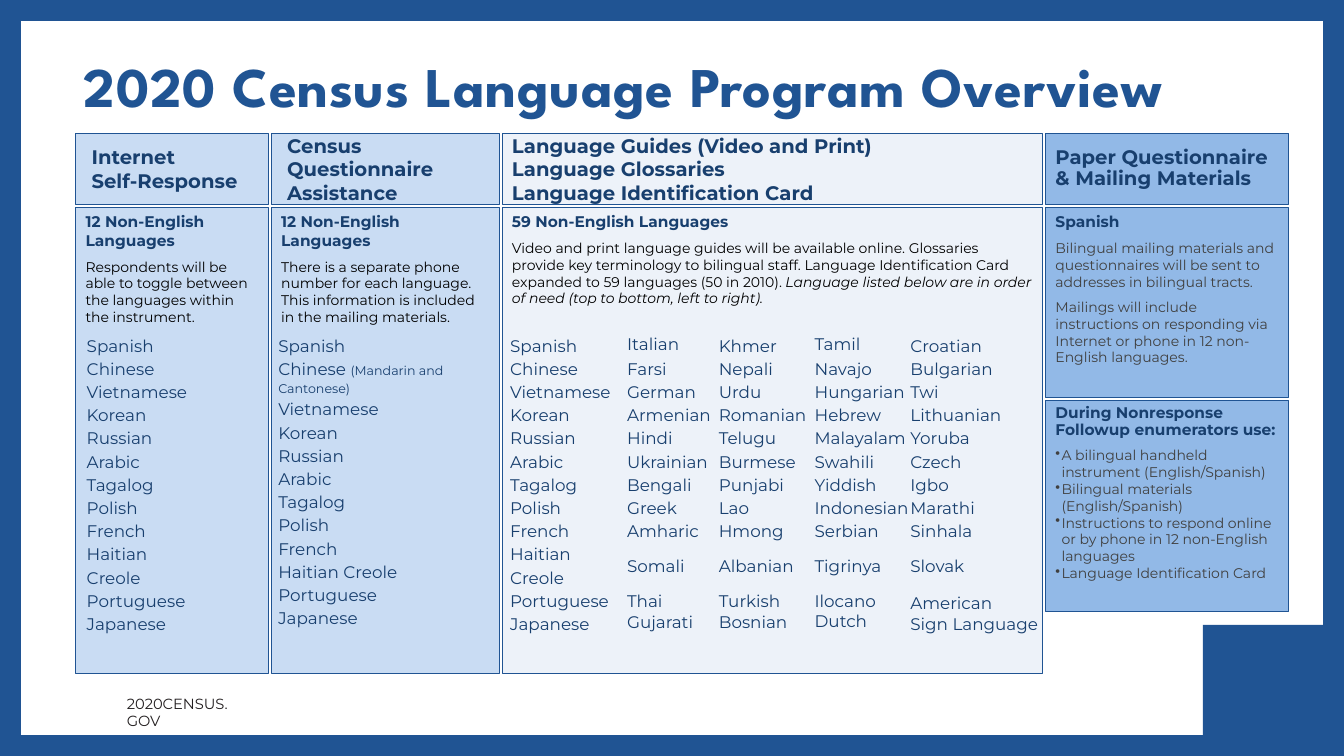
from dataclasses import dataclass
from lxml import etree
from pptx import Presentation
from pptx.dml.color import RGBColor
from pptx.enum.shapes import MSO_SHAPE
from pptx.enum.text import MSO_ANCHOR, MSO_AUTO_SIZE, PP_ALIGN
from pptx.oxml.ns import qn
from pptx.util import Emu, Inches, Pt

RECTANGLE = MSO_SHAPE.RECTANGLE
TOP, MIDDLE, BOTTOM = MSO_ANCHOR.TOP, MSO_ANCHOR.MIDDLE, MSO_ANCHOR.BOTTOM
LEFT = PP_ALIGN.LEFT
NO_AUTOFIT = MSO_AUTO_SIZE.NONE
PLAIN_TABLE = "{2D5ABB26-0587-4C30-8999-92F81FD0307C}"
TITLE_ONLY = 5


@dataclass(frozen=True)
class Style:
    size: float
    color: str
    bold: bool = False
    italic: bool = False
    font: str = "Montserrat"


class Theme:
    blue, white = "205493", "FFFFFF"
    pale, light, medium = "EDF2F9", "C9DCF3", "92B9E7"
    title = Style(40, blue, True, font="League Spartan")
    header = Style(14, "183F6E", True)
    lead = Style(11, "183F6E", True)
    body = Style(10, "000000")
    emphasis = Style(10, "000000", italic=True)
    gray = Style(10, "404040")
    language = Style(12, "183F6E")
    note = Style(9, "183F6E")
    footer = Style(10.5, "231F20")


@dataclass(frozen=True)
class Box:
    left: float
    top: float
    width: float
    height: float

    def inches(self):
        return [Inches(n) for n in (self.left, self.top, self.width, self.height)]


@dataclass(frozen=True)
class Line:
    runs: tuple
    after: float = 0
    spacing: float = 1.0
    indent: float = 0
    bullet: bool = False


SLIDE = Box(0, 0, 13.33, 7.5)
GAP = 0.03
COLUMN_WIDTHS = (1.91, 2.26, 5.36, 2.41)
COLUMN_LEFTS = [0.75 + sum(COLUMN_WIDTHS[:i]) + GAP * i for i in range(4)]
HEADER_TOP, HEADER_HEIGHT = 1.32, 0.71
BODY_TOP, BODY_HEIGHT = HEADER_TOP + HEADER_HEIGHT + GAP, 4.62
SPANISH_HEIGHT, FOLLOWUP_HEIGHT = 1.88, 2.1
LIST_TOP, LIST_HEIGHT, ROW_HEIGHT = 3.3, 2.6, 0.15

TOP_LANGUAGES = ["Spanish", "Chinese", "Vietnamese", "Korean", "Russian", "Arabic", "Tagalog",
                 "Polish", "French", "Haitian Creole", "Portuguese", "Japanese"]
GUIDE_LANGUAGES = [
    TOP_LANGUAGES,
    ["Italian", "Farsi", "German", "Armenian", "Hindi", "Ukrainian", "Bengali", "Greek",
     "Amharic", "Somali", "Thai", "Gujarati"],
    ["Khmer", "Nepali", "Urdu", "Romanian", "Telugu", "Burmese", "Punjabi", "Lao", "Hmong",
     "Albanian", "Turkish", "Bosnian"],
    ["Tamil", "Navajo", "Hungarian", "Hebrew", "Malayalam", "Swahili", "Yiddish", "Indonesian",
     "Serbian", "Tigrinya", "Ilocano", "Dutch"],
    ["Croatian", "Bulgarian", "Twi", "Lithuanian", "Yoruba", "Czech", "Igbo", "Marathi",
     "Sinhala", "Slovak", "American\nSign Language"],
]
SINGLE_SPACED = {"Italian", "Tamil", "Gujarati", "Bosnian", "Dutch", "American\nSign Language"}
ANCHORS = {"Dutch": TOP, "American\nSign Language": BOTTOM}


def format_run(run, style):
    font = run.font
    font.name, font.size = style.font, Pt(style.size)
    font.bold, font.italic = style.bold, style.italic
    font.color.rgb = RGBColor.from_string(style.color)


def add_run(paragraph, text, style):
    run = paragraph.add_run()
    run.text = text
    format_run(run, style)


def write_lines(text_frame, lines):
    for i, line in enumerate(lines):
        paragraph = text_frame.add_paragraph() if i else text_frame.paragraphs[0]
        paragraph.alignment = LEFT
        paragraph.line_spacing, paragraph.space_after = line.spacing, Pt(line.after)
        properties = paragraph._p.get_or_add_pPr()
        if line.indent:
            properties.set("marL", str(Inches(line.indent)))
            properties.set("indent", str(-Inches(line.indent) if line.bullet else 0))
        if line.bullet:
            etree.SubElement(properties, qn("a:buChar")).set("char", "•")
            tabs = etree.SubElement(properties, qn("a:tabLst"))
            tab = etree.SubElement(tabs, qn("a:tab"))
            tab.set("pos", str(Inches(line.indent)))
            tab.set("algn", "l")
        for text, style in line.runs:
            add_run(paragraph, text, style)


def add_panel(slide, box, fill, lines=(), anchor=TOP, outlined=True):
    shape = slide.shapes.add_shape(RECTANGLE, *box.inches())
    shape.shadow.inherit = False
    shape.fill.solid()
    shape.fill.fore_color.rgb = RGBColor.from_string(fill)
    if outlined:
        shape.line.color.rgb = RGBColor.from_string(Theme.blue)
        shape.line.width = Pt(0.5)
    else:
        shape.line.fill.background()
    shape.text_frame.word_wrap = True
    shape.text_frame.vertical_anchor = anchor
    write_lines(shape.text_frame, lines)


def add_header(slide, column, fill, texts, spacing=1.0, indent=0):
    box = Box(COLUMN_LEFTS[column], HEADER_TOP, COLUMN_WIDTHS[column], HEADER_HEIGHT)
    lines = [Line(((text, Theme.header),), spacing=spacing, indent=indent) for text in texts]
    add_panel(slide, box, fill, lines, MIDDLE)


def add_body(slide, column, fill, lead, *runs):
    box = Box(COLUMN_LEFTS[column], BODY_TOP, COLUMN_WIDTHS[column], BODY_HEIGHT)
    add_panel(slide, box, fill, [Line(((lead, Theme.lead),), after=6), Line(runs)])


def add_languages(slide, left, widths, columns):
    box = Box(left, LIST_TOP, sum(widths), LIST_HEIGHT)
    frame = slide.shapes.add_table(len(columns[0]), len(columns), *box.inches())
    table = frame.table
    table.first_row = table.horz_banding = False
    table._tbl.tblPr.find(qn("a:tableStyleId")).text = PLAIN_TABLE
    for row in table.rows:
        row.height = Inches(ROW_HEIGHT)
    for c, (width, names) in enumerate(zip(widths, columns)):
        table.columns[c].width = Inches(width)
        if len(names) < len(table.rows):
            table.cell(len(names) - 1, c).merge(table.cell(len(table.rows) - 1, c))
        for r, name in enumerate(names):
            cell = table.cell(r, c)
            cell.fill.background()
            cell.margin_left = cell.margin_right = cell.margin_top = cell.margin_bottom = Emu(0)
            cell.vertical_anchor = ANCHORS.get(name, MIDDLE)
            cell.text_frame.text = name
            for paragraph in cell.text_frame.paragraphs:
                paragraph.line_spacing = 1.0 if name in SINGLE_SPACED else 1.15
                format_run(paragraph.runs[0], Theme.language)
    frame.height = Inches(LIST_HEIGHT)
    return table


def add_frame(slide):
    slide.background.fill.solid()
    slide.background.fill.fore_color.rgb = RGBColor.from_string(Theme.blue)
    border = 0.21
    page = Box(border, border, SLIDE.width - 2 * border, SLIDE.height - 2 * border)
    add_panel(slide, page, Theme.white, outlined=False)
    corner = Box(SLIDE.width - 1.4, SLIDE.height - 1.3, 1.4, 1.3)
    add_panel(slide, corner, Theme.blue, outlined=False)
    footer = slide.shapes.add_textbox(*Box(1.16, 6.84, 1.29, 0.28).inches())
    footer.text_frame.word_wrap = True
    write_lines(footer.text_frame, [Line((("2020CENSUS.GOV", Theme.footer),))])


def add_title(slide, box, text):
    title = slide.shapes.title
    slide.shapes._spTree.append(title._element)
    title.left, title.top, title.width, title.height = box.inches()
    title.text_frame.word_wrap = True
    title.text_frame.auto_size = NO_AUTOFIT
    title.text_frame.vertical_anchor = BOTTOM
    write_lines(title.text_frame, [Line(((text, Theme.title),), spacing=0.9)])
    title.text_frame.paragraphs[0].runs[0]._r.get_or_add_rPr().set("spc", "60")


def add_internet(slide):
    add_header(slide, 0, Theme.light, ["Internet", "Self-Response"], indent=0.06)
    add_body(slide, 0, Theme.light, "12 Non-English Languages", (
        "Respondents will be able to toggle between the languages within the instrument.", Theme.body))
    add_languages(slide, COLUMN_LEFTS[0] + 0.11, [1.16], [TOP_LANGUAGES])


def add_assistance(slide):
    add_header(slide, 1, Theme.light, ["Census Questionnaire", "Assistance"], indent=0.06)
    add_body(slide, 1, Theme.light, "12 Non-English Languages", (
        "There is a separate phone number for each language. This information is included "
        "in the mailing materials.", Theme.body))
    table = add_languages(slide, COLUMN_LEFTS[1] + 0.07, [2.14], [TOP_LANGUAGES])
    chinese = table.cell(1, 0).text_frame.paragraphs[0]
    chinese.runs[0].text = "Chinese "
    add_run(chinese, "(Mandarin and Cantonese)", Theme.note)


def add_guides(slide):
    add_header(slide, 2, Theme.pale, ["Language Guides (Video and Print)", "Language Glossaries",
                                      "Language Identification Card"])
    add_body(slide, 2, Theme.pale, "59 Non-English Languages", (
        "Video and print language guides will be available online. Glossaries provide key "
        "terminology to bilingual staff. Language Identification Card expanded to 59 languages "
        "(50 in 2010). ", Theme.body), (
        "Language listed below are in order of need (top to bottom, left to right).", Theme.emphasis))
    add_languages(slide, COLUMN_LEFTS[2] + 0.08, [1.16, 0.91, 0.95, 0.95, 1.92], GUIDE_LANGUAGES)


def add_paper(slide):
    left, width = COLUMN_LEFTS[3], COLUMN_WIDTHS[3]
    add_header(slide, 3, Theme.medium, ["Paper Questionnaire", "& Mailing Materials"], spacing=0.9)
    add_panel(slide, Box(left, BODY_TOP, width, SPANISH_HEIGHT), Theme.medium, [
        Line((("Spanish", Theme.lead),), after=6),
        Line((("Bilingual mailing materials and questionnaires will be sent to addresses in "
               "bilingual tracts.", Theme.gray),), after=6),
        Line((("Mailings will include instructions on responding via Internet or phone in 12 "
               "non-English languages.", Theme.gray),))])
    tools = ["A bilingual handheld instrument (English/Spanish)",
             "Bilingual materials (English/Spanish)",
             "Instructions to respond online or by phone in 12 non-English languages",
             "Language Identification Card"]
    heading = Line((("During Nonresponse Followup enumerators use:", Theme.lead),), after=6, spacing=0.9)
    bullets = [Line(((tool, Theme.gray),), indent=0.06, bullet=True) for tool in tools]
    followup = Box(left, BODY_TOP + SPANISH_HEIGHT + GAP, width, FOLLOWUP_HEIGHT)
    add_panel(slide, followup, Theme.medium, [heading, *bullets])


def main():
    presentation = Presentation()
    presentation.slide_width, presentation.slide_height = Inches(SLIDE.width), Inches(SLIDE.height)
    slide = presentation.slides.add_slide(presentation.slide_layouts[TITLE_ONLY])
    add_frame(slide)
    for add_region in (add_internet, add_assistance, add_guides, add_paper):
        add_region(slide)
    add_title(slide, Box(0.73, 0.3, 12.22, 0.94), "2020 Census Language Program Overview")
    presentation.save("out.pptx")


if __name__ == "__main__":
    main()
